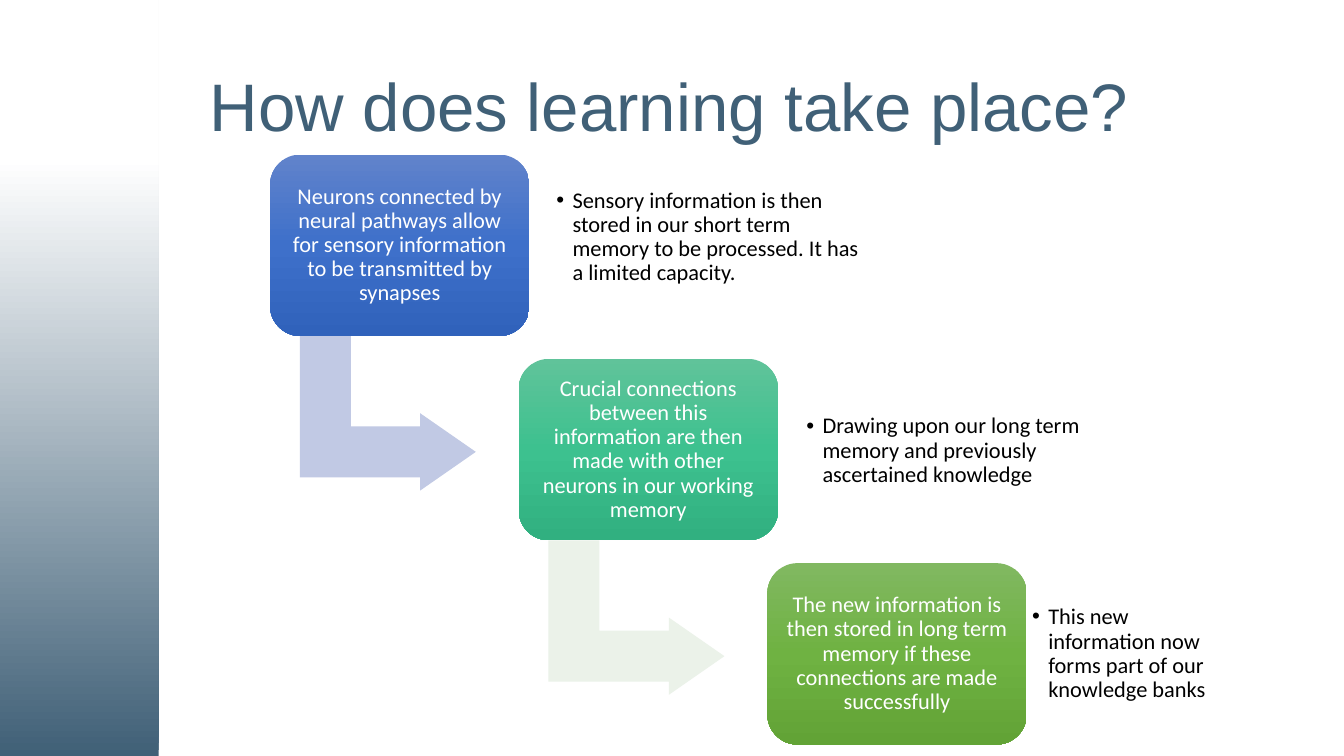
from lxml.etree import SubElement
from pptx import Presentation
from pptx.dml.color import RGBColor
from pptx.enum.shapes import MSO_SHAPE
from pptx.enum.text import MSO_ANCHOR, MSO_AUTO_SIZE, PP_ALIGN
from pptx.oxml.ns import qn
from pptx.util import Inches, Pt

SLATE = RGBColor(0x40, 0x60, 0x77)
WHITE = RGBColor(0xFF, 0xFF, 0xFF)
BLACK = RGBColor(0x00, 0x00, 0x00)
BLUES = [RGBColor(0x61, 0x83, 0xCB), RGBColor(0x3E, 0x70, 0xCA), RGBColor(0x30, 0x62, 0xBB)]
TEALS = [RGBColor(0x60, 0xC3, 0x9A), RGBColor(0x3D, 0xC1, 0x8F), RGBColor(0x31, 0xB0, 0x80)]
GREENS = [RGBColor(0x81, 0xB8, 0x61), RGBColor(0x6F, 0xB2, 0x42), RGBColor(0x62, 0xA3, 0x36)]
PALE_BLUE = RGBColor(0xC1, 0xC9, 0xE4)
PALE_GREEN = RGBColor(0xEB, 0xF2, 0xE9)

SLIDE_WIDTH = 10
SLIDE_HEIGHT = SLIDE_WIDTH * 9 / 16
BOX_WIDTH, BOX_HEIGHT = 1.93, 1.35
FIRST_LEFT, FIRST_TOP = 2.01, 1.15
STEP_RIGHT, STEP_DOWN = 1.85, 1.52

STEPS = [
    ("Neurons connected by neural pathways allow for sensory information to be transmitted by synapses",
     BLUES, PALE_BLUE,
     "Sensory information is then stored in our short term memory to be processed. It has a limited capacity.",
     (2.08, 0.07), 2.42),
    ("Crucial connections between this information are then made with other neurons in our working memory",
     TEALS, PALE_GREEN,
     "Drawing upon our long term memory and previously ascertained knowledge",
     (2.09, 0.14), 2.48),
    ("The new information is then stored in long term memory if these connections are made successfully",
     GREENS, None,
     "This new information now forms part of our knowledge banks",
     (1.92, 0.13), 1.41),
]


def add_plain_shape(slide, kind, left, top, width, height):
    """Add a preset shape without outline or shadow."""
    shape = slide.shapes.add_shape(kind, Inches(left), Inches(top), Inches(width), Inches(height))
    shape.shadow.inherit = False
    shape.line.fill.background()
    return shape


def set_gradient(shape, stops, angle):
    """Fill a shape with (percent, colour) stops along a counter-clockwise angle."""
    shape.fill.gradient()
    shape.fill.gradient_angle = angle
    stop_list = shape.element.spPr.find(qn("a:gradFill")).find(qn("a:gsLst"))
    for old_stop in list(stop_list):
        stop_list.remove(old_stop)
    for percent, color in stops:
        stop = SubElement(stop_list, qn("a:gs"), pos=str(percent * 1000))
        SubElement(stop, qn("a:srgbClr"), val=str(color))


def write_text(shape, text, size, color, font_name, alignment):
    """Write one middle-anchored paragraph and return it."""
    frame = shape.text_frame
    frame.word_wrap = True
    frame.auto_size = MSO_AUTO_SIZE.NONE
    frame.vertical_anchor = MSO_ANCHOR.MIDDLE
    paragraph = frame.paragraphs[0]
    paragraph.alignment = alignment
    paragraph.line_spacing = 0.9
    run = paragraph.add_run()
    run.text = text
    run.font.size = Pt(size)
    run.font.name = font_name
    run.font.color.rgb = color
    return paragraph


def set_margins(shape, margin):
    """Give a text frame the same margin on all sides."""
    frame = shape.text_frame
    frame.margin_left = frame.margin_right = Inches(margin)
    frame.margin_top = frame.margin_bottom = Inches(margin)


def add_sidebar(slide, left, top, width, height):
    """Draw the fading band at the slide's edge."""
    sidebar = add_plain_shape(slide, MSO_SHAPE.RECTANGLE, left, top, width, height)
    set_gradient(sidebar, [(0, SLATE), (79, WHITE)], 90)


def place_title(slide, left, top, width, height):
    """Move and fill the title placeholder."""
    title = slide.shapes.title
    title.left, title.top = Inches(left), Inches(top)
    title.width, title.height = Inches(width), Inches(height)
    write_text(title, "How does learning take place?", 36, SLATE, "Arial", PP_ALIGN.LEFT)


def add_arrow(slide, left, top, color):
    """Draw the bent arrow that leaves the bottom of the box at left, top."""
    arrow = add_plain_shape(slide, MSO_SHAPE.BENT_UP_ARROW, left + 0.3, top + 1.27, 1.15, 1.31)
    arrow.rotation = 90
    for index, value in enumerate((0.33, 0.25, 0.36)):
        arrow.adjustments[index] = value
    arrow.fill.solid()
    arrow.fill.fore_color.rgb = color


def add_note(slide, left, top, width, height, text):
    """Add a bulleted note beside a box."""
    note = slide.shapes.add_textbox(Inches(left), Inches(top), Inches(width), Inches(height))
    set_margins(note, 0.05)
    paragraph = write_text(note, text, 12, BLACK, "Calibri", PP_ALIGN.LEFT)
    properties = paragraph._p.get_or_add_pPr()
    properties.set("marL", str(Inches(0.12)))
    properties.set("indent", str(Inches(-0.12)))
    SubElement(properties, qn("a:buFont"), typeface="Arial")
    SubElement(properties, qn("a:buChar"), char="•")


def add_step(slide, left, top, step):
    """Draw one step: arrow, box and note."""
    text, colors, arrow_color, note_text, (note_left, note_top), note_width = step
    if arrow_color is not None:
        add_arrow(slide, left, top, arrow_color)
    box = add_plain_shape(slide, MSO_SHAPE.ROUNDED_RECTANGLE, left, top, BOX_WIDTH, BOX_HEIGHT)
    set_gradient(box, zip((0, 50, 100), colors), 270)
    set_margins(box, 0.05)
    write_text(box, text, 12, WHITE, "Calibri", PP_ALIGN.CENTER)
    add_note(slide, left + note_left, top + note_top, note_width, 1.09, note_text)


def main():
    """Build and save the presentation."""
    presentation = Presentation()
    presentation.slide_width = Inches(SLIDE_WIDTH)
    presentation.slide_height = Inches(SLIDE_HEIGHT)
    slide = presentation.slides.add_slide(presentation.slide_layouts[5])
    add_sidebar(slide, 0, 0, 1.18, SLIDE_HEIGHT)
    place_title(slide, 1.46, 0.3, 7.23, 1.03)
    for index, step in enumerate(STEPS):
        add_step(slide, FIRST_LEFT + index * STEP_RIGHT, FIRST_TOP + index * STEP_DOWN, step)
    presentation.save("out.pptx")


if __name__ == "__main__":
    main()
